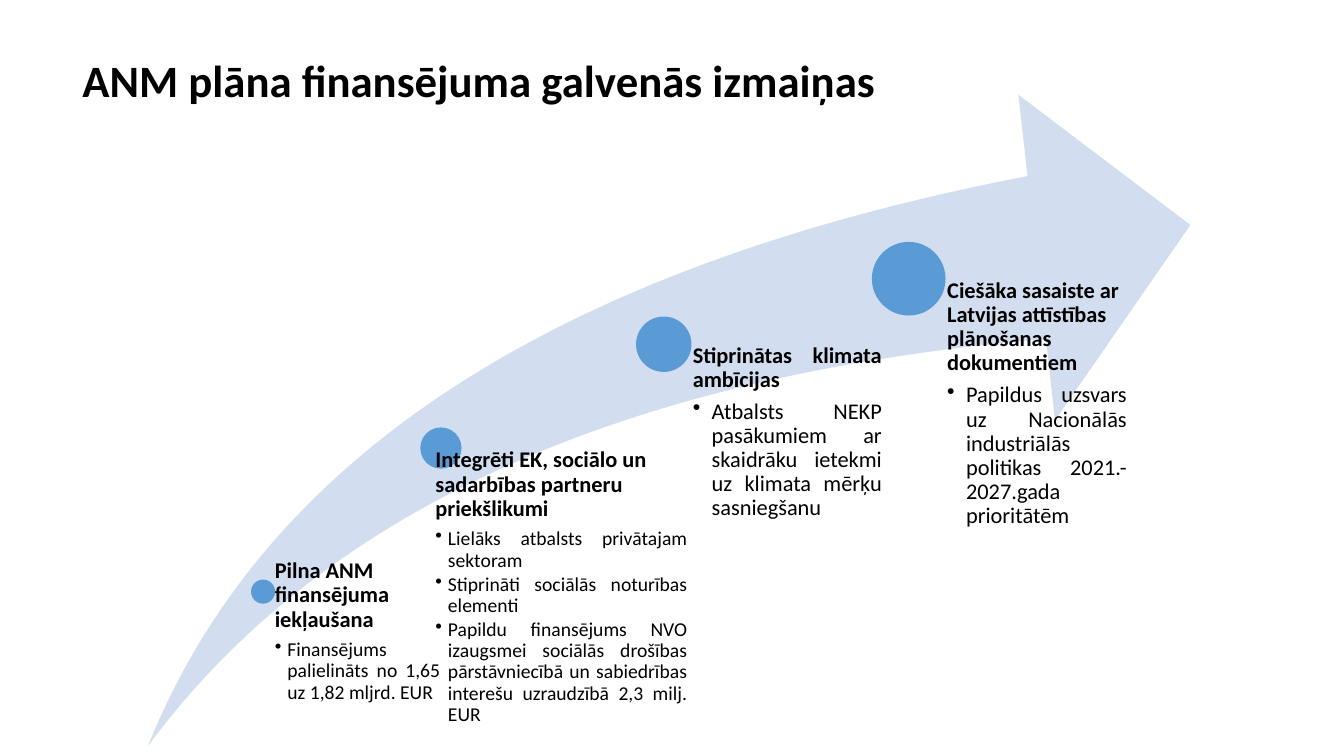
import pptx
import pptx.util
import pptx.dml.color
import pptx.enum.shapes
import pptx.enum.text
import pptx.oxml.ns
from dataclasses import dataclass
from lxml import etree

Pt = pptx.util.Pt
RGB = pptx.dml.color.RGBColor
SHAPE = pptx.enum.shapes.MSO_SHAPE
ALIGN = pptx.enum.text.PP_ALIGN
ANCHOR = pptx.enum.text.MSO_ANCHOR


@dataclass(frozen=True)
class Theme:
    font: str = "Calibri"
    text: RGB = RGB(0x00, 0x00, 0x00)
    arrow: RGB = RGB(0xD2, 0xDE, 0xEF)
    dot: RGB = RGB(0x5B, 0x9B, 0xD5)
    title_size: int = 32
    heading_size: int = 16
    small_size: int = 14


theme = Theme()

# Dot: left, top, diameter. Text: left, top, width, left inset.
# Then heading, heading alignment, bullet size, bullet indent, bullets.
steps = [
    ((179.3, 414, 17.2), (187.2, 399.6, 127.4, 9.1),
     "Pilna ANM finansējuma iekļaušana", ALIGN.LEFT, theme.small_size, 9,
     ["Finansējums palielināts no 1,65 uz 1,82 mljrd. EUR"]),
    ((300.2, 305.3, 29.5), (295.2, 320.4, 195.8, 15.8),
     "Integrēti EK, sociālo un sadarbības partneru priekšlikumi", ALIGN.LEFT, theme.small_size, 9,
     ["Lielāks atbalsts privātajam sektoram",
      "Stiprināti sociālās noturības elementi",
      "Papildu finansējums NVO izaugsmei sociālās drošības pārstāvniecībā un "
      "sabiedrības interešu uzraudzībā 2,3 milj. EUR"]),
    ((454.3, 226.1, 39.6), (473.8, 245.5, 156.2, 21.1),
     "Stiprinātas klimata ambīcijas", ALIGN.JUSTIFY, theme.heading_size, 13.5,
     ["Atbalsts NEKP pasākumiem ar skaidrāku ietekmi uz klimata mērķu sasniegšanu"]),
    ((622.8, 172.8, 52.6), (648.7, 199.4, 156.2, 27.9),
     "Ciešāka sasaiste ar Latvijas attīstības plānošanas dokumentiem", ALIGN.LEFT,
     theme.heading_size, 13.5,
     ["Papildus uzsvars uz Nacionālās industriālās politikas 2021.-2027.gada prioritātēm"]),
]
ARROW_BOTTOM = 532.8

deck = pptx.Presentation()
deck.slide_width, deck.slide_height = Pt(960), Pt(540)
slide = deck.slides.add_slide(deck.slide_layouts[6])


def add_figure(preset, left, top, width, height, color):
    figure = slide.shapes.add_shape(preset, Pt(left), Pt(top), Pt(width), Pt(height))
    figure.shadow.inherit = False
    figure.fill.solid()
    figure.fill.fore_color.rgb = color
    figure.line.fill.background()
    return figure


def write_paragraph(paragraph, text, size, bold, align, space_after):
    paragraph.text = text
    paragraph.alignment = align
    paragraph.line_spacing = 0.9
    paragraph.space_before = Pt(0)
    paragraph.space_after = Pt(space_after)
    paragraph.font.name = theme.font
    paragraph.font.size = Pt(size)
    paragraph.font.bold = bold
    paragraph.font.color.rgb = theme.text


title = slide.shapes.add_textbox(Pt(51.84), Pt(7.2), Pt(828), Pt(104.4)).text_frame
title.word_wrap = True
title.vertical_anchor = ANCHOR.MIDDLE
write_paragraph(title.paragraphs[0], "ANM plāna finansējuma galvenās izmaiņas",
                theme.title_size, True, ALIGN.LEFT, 0)

swoosh = add_figure(SHAPE.SWOOSH_ARROW, 105.8, 67.7, 744.5, 465.1, theme.arrow)
swoosh.adjustments[0] = 0.25
swoosh.adjustments[1] = 0.25

for dot, area, heading, heading_align, bullet_size, indent, bullets in steps:
    dot_left, dot_top, diameter = dot
    add_figure(SHAPE.OVAL, dot_left, dot_top, diameter, diameter, theme.dot)

    left, top, width, inset = area
    story = slide.shapes.add_textbox(Pt(left), Pt(top), Pt(width), Pt(ARROW_BOTTOM - top)).text_frame
    story.word_wrap = True
    story.margin_left = Pt(inset)
    story.margin_top = story.margin_right = story.margin_bottom = 0
    write_paragraph(story.paragraphs[0], heading, theme.heading_size, True,
                    heading_align, 0.35 * theme.heading_size)

    for bullet in bullets:
        item = story.add_paragraph()
        item.level = 1
        write_paragraph(item, bullet, bullet_size, False, ALIGN.JUSTIFY, 0.15 * bullet_size)
        properties = item._p.get_or_add_pPr()
        properties.set("marL", str(Pt(indent)))
        properties.set("indent", str(-Pt(indent)))
        mark = etree.Element(pptx.oxml.ns.qn("a:buChar"), char="•")
        properties.find(pptx.oxml.ns.qn("a:spcAft")).addnext(mark)

deck.save("out.pptx")
